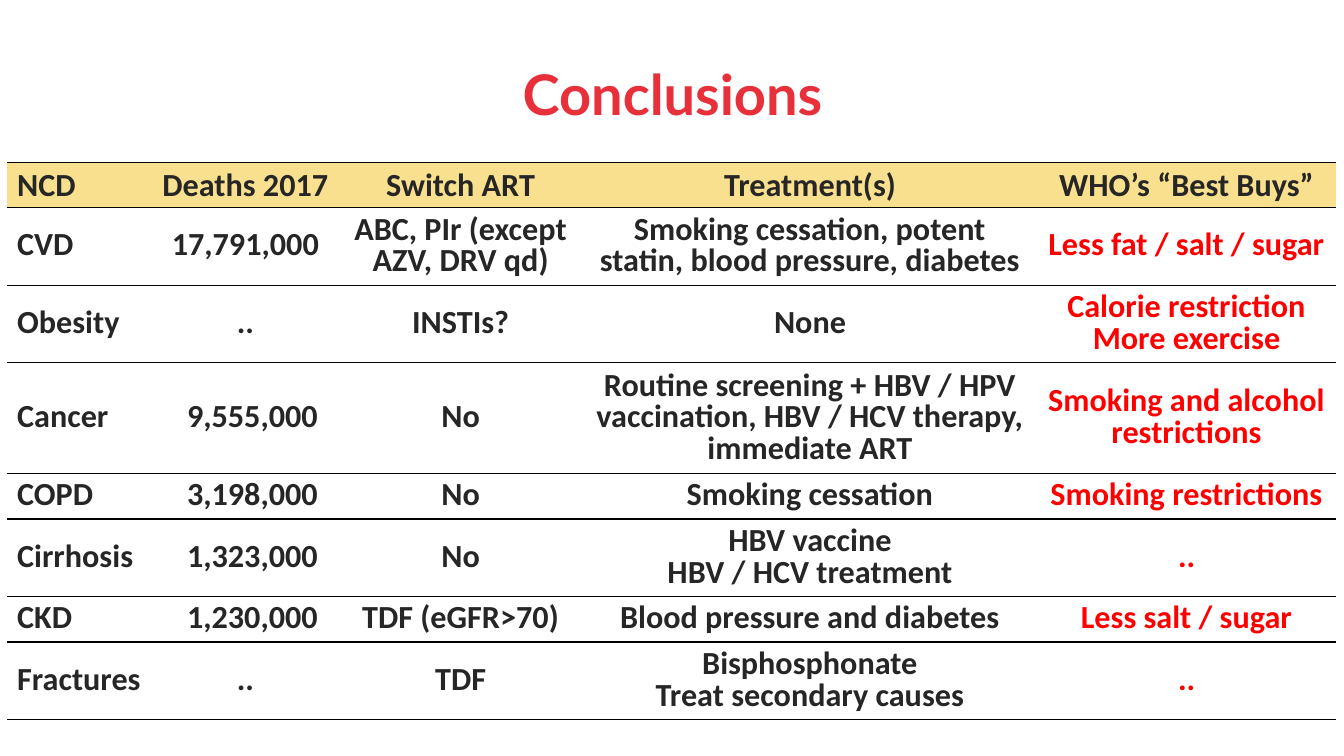
from lxml import etree
from pptx import Presentation
from pptx.dml.color import RGBColor
from pptx.enum.text import MSO_ANCHOR, PP_ALIGN
from pptx.oxml.ns import qn
from pptx.util import Inches, Pt

LEFT, CENTER = PP_ALIGN.LEFT, PP_ALIGN.CENTER
MIDDLE, BOTTOM = MSO_ANCHOR.MIDDLE, MSO_ANCHOR.BOTTOM

RED = RGBColor(0xE8, 0x30, 0x3B)
BRIGHT_RED = RGBColor(0xFF, 0x00, 0x00)
DARK = RGBColor(0x26, 0x26, 0x26)
YELLOW = RGBColor(0xF8, 0xE0, 0x8E)
BLACK = RGBColor(0x00, 0x00, 0x00)

COL_WIDTHS = [1.44, 1.85, 2.42, 4.51, 2.96]
ROW_HEIGHTS = [0.45, 0.77, 0.77, 1.1, 0.45, 0.77, 0.45, 0.77]
DEATHS_COL, BEST_BUYS_COL = 1, 4
ROWS = [
    ["NCD", "Deaths 2017", "Switch ART", "Treatment(s)", "WHO’s “Best Buys”"],
    ["CVD", "17,791,000", "ABC, PIr (except AZV, DRV qd)",
     "Smoking cessation, potent statin, blood pressure, diabetes",
     "Less fat / salt / sugar"],
    ["Obesity", "..", "INSTIs?", "None", "Calorie restriction\nMore exercise"],
    ["Cancer", "9,555,000", "No",
     "Routine screening + HBV / HPV vaccination, HBV / HCV therapy, immediate ART",
     "Smoking and alcohol restrictions"],
    ["COPD", "3,198,000", "No", "Smoking cessation", "Smoking restrictions"],
    ["Cirrhosis", "1,323,000", "No", "HBV vaccine\nHBV / HCV treatment", ".."],
    ["CKD", "1,230,000", "TDF (eGFR>70)", "Blood pressure and diabetes",
     "Less salt / sugar"],
    ["Fractures", "..", "TDF", "Bisphosphonate\nTreat secondary causes", ".."],
]


def write(tf, text, font="Calibri", size=23, color=DARK, align=CENTER, spacing=None):
    """Fill a text frame, one paragraph per line of text."""
    for i, line in enumerate(text.split("\n")):
        p = tf.paragraphs[0] if i == 0 else tf.add_paragraph()
        p.alignment = align
        if spacing:
            p.line_spacing = spacing
        r = p.add_run()
        r.text = line
        r.font.name, r.font.size, r.font.bold = font, Pt(size), True
        r.font.color.rgb = color


def rule_cell(cell):
    """Draw black lines above and below a cell, and none at its sides."""
    tcPr = cell._tc.get_or_add_tcPr()
    for side in ("L", "R", "T", "B"):
        ln = etree.SubElement(tcPr, qn(f"a:ln{side}"), w=str(Pt(1)))
        if side in "LR":
            etree.SubElement(ln, qn("a:noFill"))
        else:
            fill = etree.SubElement(ln, qn("a:solidFill"))
            etree.SubElement(fill, qn("a:srgbClr"), val=str(BLACK))


class SlideBuilder:
    def __init__(self, prs):
        self.s = prs.slides.add_slide(prs.slide_layouts[5])

    def title(self, text, left, top, width, height):
        sp = self.s.shapes.title
        sp.left, sp.top = Inches(left), Inches(top)
        sp.width, sp.height = Inches(width), Inches(height)
        sp.text_frame.vertical_anchor = MIDDLE
        write(sp.text_frame, text, font="Lato", size=40, color=RED)

    def table(self, rows, left, top):
        table = self.s.shapes.add_table(
            len(rows), len(COL_WIDTHS), Inches(left), Inches(top),
            Inches(sum(COL_WIDTHS)), Inches(sum(ROW_HEIGHTS))).table
        table.horz_banding = table.first_row = False
        for column, width in zip(table.columns, COL_WIDTHS):
            column.width = Inches(width)
        for i, (row, height) in enumerate(zip(rows, ROW_HEIGHTS)):
            table.rows[i].height = Inches(height)
            for j, text in enumerate(row):
                self.cell(table.cell(i, j), text, j, header=i == 0)

    def cell(self, cell, text, col, header):
        rule_cell(cell)
        if header:
            cell.fill.solid()
            cell.fill.fore_color.rgb = YELLOW
        else:
            cell.fill.background()
        cell.vertical_anchor = BOTTOM if header else MIDDLE
        # Seven-digit counts move right to line up with the longest one
        is_short_count = col == DEATHS_COL and text.count(",") == 2 and len(text) == 9
        cell.margin_left = Inches(0.24 if is_short_count else 0.1)
        cell.margin_right = Inches(0.1)
        cell.margin_top = cell.margin_bottom = Inches(0.05)
        color = BRIGHT_RED if col == BEST_BUYS_COL and not header else DARK
        write(cell.text_frame, text, color=color,
              align=LEFT if col == 0 else CENTER, spacing=0.8)


def main():
    prs = Presentation()
    prs.slide_width, prs.slide_height = Inches(13.33), Inches(7.5)
    slide = SlideBuilder(prs)
    slide.title("Conclusions", 0.67, 0.3, 12, 1.25)
    slide.table(ROWS, 0.07, 1.61)
    prs.save("out.pptx")


if __name__ == "__main__":
    main()
